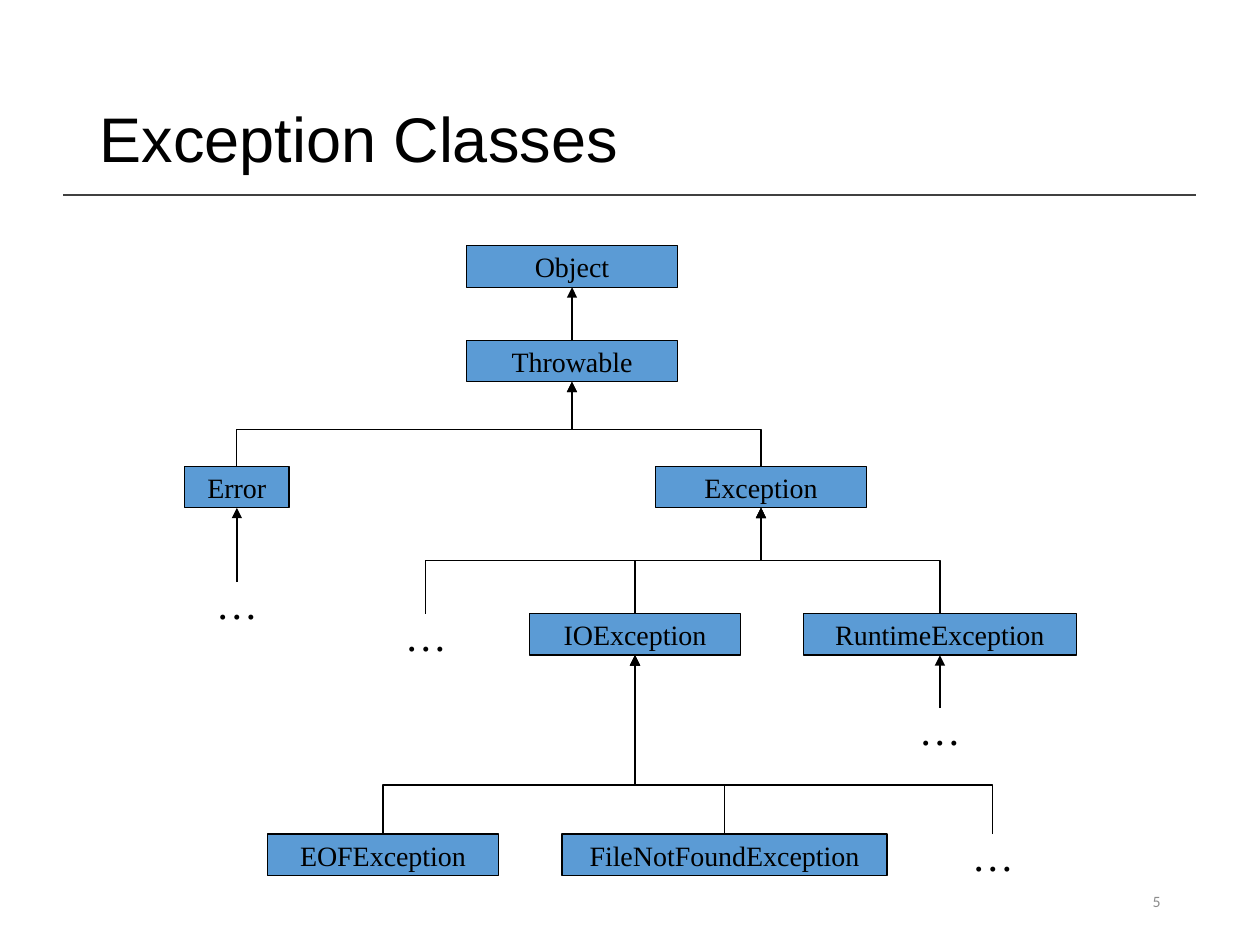
from lxml.etree import SubElement
from pptx import Presentation
from pptx.dml.color import RGBColor
from pptx.enum.shapes import MSO_CONNECTOR, MSO_SHAPE
from pptx.enum.text import MSO_ANCHOR, MSO_AUTO_SIZE, PP_ALIGN
from pptx.oxml.ns import qn
from pptx.util import Inches, Pt

BLACK, BLUE, GREY, RULE = "000000", "5B9BD5", "8C8C8C", "404040"
SERIF = "Times New Roman"
BOX_H = 0.33
TOP, BOTTOM = 0, 2  # connection sites

# Class nodes: key -> (text, centre x, top, width)
CLASSES = {
    "object": ("Object", 4.54, 1.95, 1.67),
    "throwable": ("Throwable", 4.54, 2.7, 1.67),
    "error": ("Error", 1.88, 3.7, 0.83),
    "exception": ("Exception", 6.04, 3.7, 1.67),
    "io": ("IOException", 5.04, 4.87, 1.67),
    "runtime": ("RuntimeException", 7.46, 4.87, 2.17),
    "eof": ("EOFException", 3.04, 6.62, 1.83),
    "file": ("FileNotFoundException", 5.75, 6.62, 2.58),
}
# Further subclasses, shown as an ellipsis: key -> (centre x, top)
MORE = {
    "more errors": (1.88, 4.62),
    "more exceptions": (3.38, 4.87),
    "more runtime": (7.46, 5.62),
    "more io": (7.88, 6.62),
}
# Parent, its children, height of the shared bar (None: straight arrow)
TREE = [
    ("object", ["throwable"], None),
    ("throwable", ["error", "exception"], 3.41),
    ("error", ["more errors"], None),
    ("exception", ["more exceptions", "io", "runtime"], 4.45),
    ("runtime", ["more runtime"], None),
    ("io", ["eof", "file", "more io"], 6.23),
]


def rgb(color):
    return RGBColor.from_string(color)


def set_text(sp, text, size=16, font=SERIF, color=BLACK,
             align=PP_ALIGN.CENTER, wrap=False, spacing=None):
    tf = sp.text_frame
    tf.auto_size = MSO_AUTO_SIZE.NONE
    tf.word_wrap = wrap
    tf.vertical_anchor = MSO_ANCHOR.MIDDLE
    p = tf.paragraphs[0]
    p.alignment = align
    p.line_spacing = spacing
    r = p.add_run()
    r.text = text
    r.font.size, r.font.name = Pt(size), font
    r.font.color.rgb = rgb(color)


def add_class(slide, text, cx, top, width):
    sp = slide.shapes.add_shape(MSO_SHAPE.RECTANGLE, Inches(cx - width / 2),
                                Inches(top), Inches(width), Inches(BOX_H))
    sp.shadow.inherit = False
    sp.fill.solid()
    sp.fill.fore_color.rgb = rgb(BLUE)
    sp.line.color.rgb = rgb(BLACK)
    sp.line.width = Pt(0.75)
    set_text(sp, text)
    return sp


def add_label(slide, text, left, top, width, height, **fmt):
    sp = slide.shapes.add_textbox(Inches(left), Inches(top),
                                  Inches(width), Inches(height))
    set_text(sp, text, **fmt)
    return sp


def add_line(slide, kind, start, end, color=BLACK, width=0.75, arrow=False):
    line = slide.shapes.add_connector(kind, *start, *end)
    line.line.color.rgb = rgb(color)
    line.line.width = Pt(width)
    if arrow:
        SubElement(line.line._get_or_add_ln(), qn("a:tailEnd"), type="triangle")
    SubElement(line._element.spPr, qn("a:effectLst"))
    return line


def bend_upwards(line, start, end, bar_y):
    """Turn an elbow so that it leaves and arrives vertically, crossing at bar_y."""
    (x1, y1), (x2, y2) = start, end
    rise, run = y1 - y2, abs(x2 - x1)
    xfrm = line._element.spPr.find(qn("a:xfrm"))
    for flip in ("flipH", "flipV"):
        xfrm.attrib.pop(flip, None)
    if x1 < x2:
        xfrm.set("rot", str(270 * 60000))
    else:
        xfrm.set("rot", str(90 * 60000))
        xfrm.set("flipH", "1")
    line.left, line.top = (x1 + x2 - rise) // 2, (y1 + y2 - run) // 2
    line.width, line.height = rise, run
    geom = line._element.spPr.find(qn("a:prstGeom"))
    guides = geom.find(qn("a:avLst"))
    if guides is None:
        guides = SubElement(geom, qn("a:avLst"))
    share = round((y1 - Inches(bar_y)) / rise * 100000)
    SubElement(guides, qn("a:gd"), name="adj1", fmla=f"val {share}")


def add_inheritance(slide, child, parent, bar_y):
    start = (child.left + child.width // 2, child.top)
    end = (parent.left + parent.width // 2, parent.top + parent.height)
    kind = MSO_CONNECTOR.STRAIGHT if bar_y is None else MSO_CONNECTOR.ELBOW
    line = add_line(slide, kind, start, end, arrow=True)
    line.begin_connect(child, TOP)
    line.end_connect(parent, BOTTOM)
    if bar_y is not None:
        bend_upwards(line, start, end, bar_y)


def main():
    prs = Presentation()
    prs.slide_width, prs.slide_height = Inches(10), Inches(7.5)
    slide = prs.slides.add_slide(prs.slide_layouts[5])

    # Title and rule
    title = slide.shapes.title
    title.left, title.top = Inches(0.69), Inches(0.4)
    title.width, title.height = Inches(8.62), Inches(1.45)
    set_text(title, "Exception Classes", size=36, font="Arial",
             align=PP_ALIGN.LEFT, wrap=True, spacing=0.9)
    add_line(slide, MSO_CONNECTOR.STRAIGHT, (Inches(0.5), Inches(1.55)),
             (Inches(9.49), Inches(1.55)), color=RULE, width=1)

    # Class hierarchy
    nodes = {key: add_class(slide, *node) for key, node in CLASSES.items()}
    for key, (cx, top) in MORE.items():
        nodes[key] = add_label(slide, "…", cx - 0.335, top, 0.67, BOX_H, size=24)
    for parent, children, bar_y in TREE:
        for child in children:
            add_inheritance(slide, nodes[child], nodes[parent], bar_y)

    # Slide number
    add_label(slide, "5", 7.06, 6.95, 2.25, 0.4, size=9, font="Calibri",
              color=GREY, align=PP_ALIGN.RIGHT, wrap=True)
    prs.save("out.pptx")


if __name__ == "__main__":
    main()
